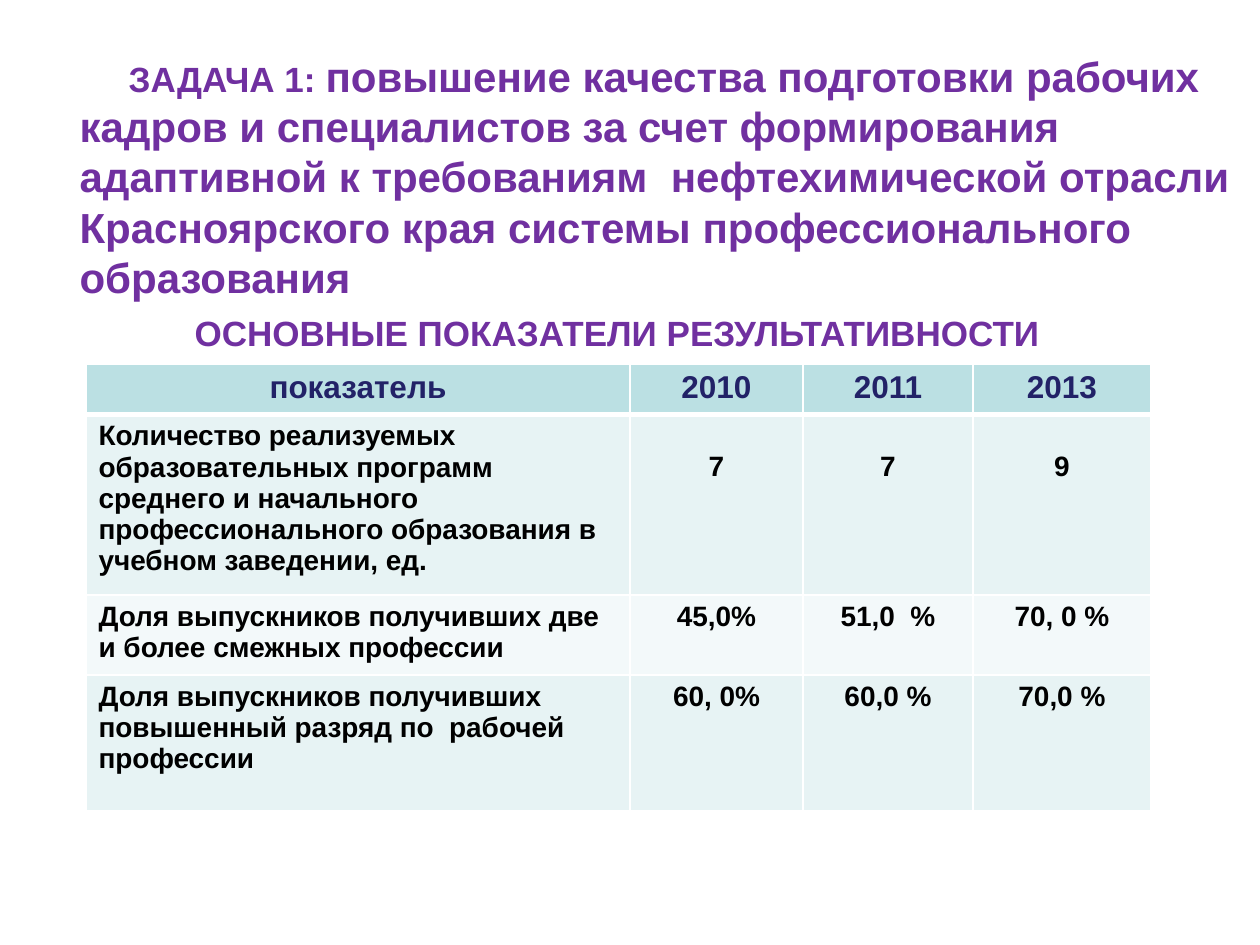
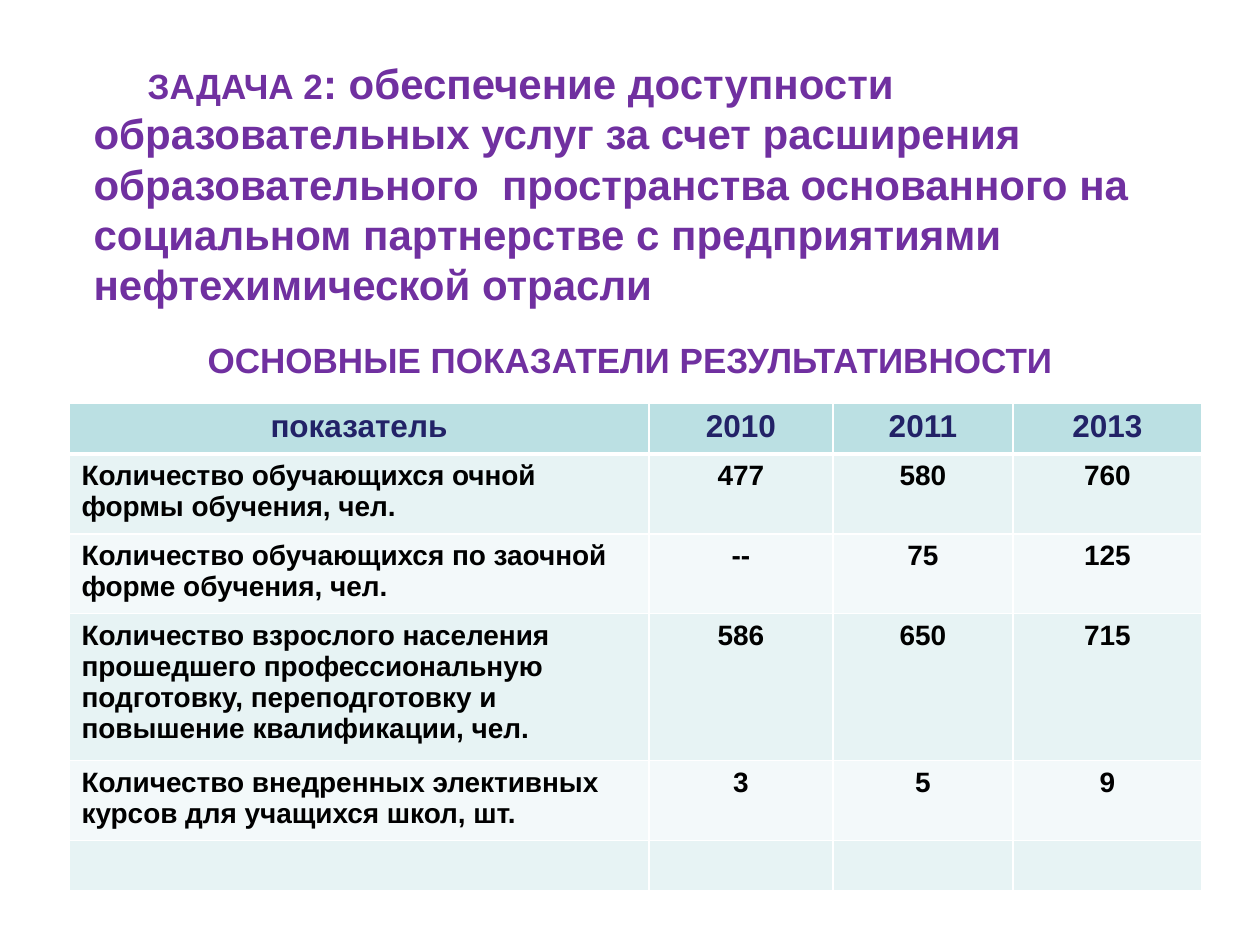
import pptx
import pptx.util
import pptx.dml.color
import pptx.enum.text
import pptx.oxml
import pptx.oxml.ns

RGB = pptx.dml.color.RGBColor
ALIGN = pptx.enum.text.PP_ALIGN
MID = pptx.enum.text.MSO_ANCHOR.MIDDLE
Pt = pptx.util.Pt

# Shared look
FONT = "Arial"
VIOLET = RGB(0x70, 0x30, 0xA0)
NAVY = RGB(0x22, 0x22, 0x67)
BLACK = RGB(0, 0, 0)
HEAD = RGB(0xBB, 0xE0, 0xE3)
BANDS = RGB(0xE7, 0xF3, 0xF4), RGB(0xF3, 0xF9, 0xFA)
WHITE = "FFFFFF"
EMU = 914400 // 126
PAD = 6
LEAD = 28.75
LINE = 31

# Content
CAPTION = "ОСНОВНЫЕ ПОКАЗАТЕЛИ РЕЗУЛЬТАТИВНОСТИ "
YEARS = ("показатель", "2010", "2011", "2013")
SLIDES = [
    dict(
        title=[("ЗАДАЧА 1: ", 20),
               ("повышение качества подготовки рабочих кадров и специалистов "
                "за счет формирования адаптивной к требованиям  "
                "нефтехимической отрасли Красноярского края системы "
                "профессионального образования", 24)],
        box=(67, 63, 1256, 276), indent=49, lift=50,
        caption=(55, 253, 1134, 158),
        place=(86, 364), cols=(544, 173, 170, 178),
        heights=(47, 168, 76, 136), lowered={1},
        rows=[
            ("Количество реализуемых образовательных программ среднего и "
             "начального профессионального образования в учебном "
             "заведении, ед.", "7", "7", "9"),
            ("Доля выпускников получивших две и более смежных профессии",
             "45,0%", "51,0  %", "70, 0 %"),
            ("Доля выпускников получивших повышенный разряд по  рабочей "
             "профессии", "60, 0%", "60,0 %", "70,0 %"),
        ]),
    dict(
        title=[("ЗАДАЧА 2", 20),
               (": обеспечение доступности образовательных услуг за счет "
                "расширения образовательного  пространства основанного на "
                "социальном партнерстве с предприятиями нефтехимической "
                "отрасли", 24)],
        box=(81, 59, 1217, 349), indent=54, lift=100,
        caption=(68, 281, 1134, 158),
        place=(69, 403), cols=(580, 184, 180, 189),
        heights=(51, 75, 75, 137, 75, 50), lowered=set(),
        rows=[
            ("Количество обучающихся очной формы обучения, чел.",
             "477", "580", "760"),
            ("Количество обучающихся по заочной форме обучения, чел.",
             "--", "75", "125"),
            ("Количество взрослого населения прошедшего профессиональную "
             "подготовку, переподготовку и повышение квалификации, чел.",
             "586", "650", "715"),
            ("Количество внедренных элективных курсов для учащихся школ, шт.",
             "3", "5", "9"),
            ("", "", "", ""),
        ]),
]


def px(num):
    return pptx.util.Emu(num * EMU)


def add_run(para, text, size, color):
    run = para.add_run()
    run.text = text
    font = run.font
    font.name, font.size, font.bold = FONT, Pt(size), True
    font.color.rgb = color


def add_title(slide, data):
    shape = slide.shapes.title
    shape.left, shape.top, shape.width, shape.height = map(px, data["box"])
    frame = shape.text_frame
    frame.auto_size = pptx.enum.text.MSO_AUTO_SIZE.NONE
    frame.word_wrap, frame.vertical_anchor = True, MID
    frame.margin_top, frame.margin_bottom = px(PAD), px(PAD + data["lift"])
    frame.margin_right = px(40)
    para = frame.paragraphs[0]
    para.alignment, para.line_spacing = ALIGN.LEFT, Pt(LEAD)
    para._p.get_or_add_pPr().set("indent", str(px(data["indent"])))
    for text, size in data["title"]:
        add_run(para, text, size, VIOLET)


def add_caption(slide, box):
    frame = slide.shapes.add_textbox(*map(px, box)).text_frame
    frame.word_wrap, frame.vertical_anchor = True, MID
    para = frame.paragraphs[0]
    para.alignment = ALIGN.CENTER
    add_run(para, CAPTION, 20, VIOLET)


def add_edges(cell, first):
    # White rules, thicker under the header row
    props = cell._tc.get_or_add_tcPr()
    for side in "LRTB":
        thick = 3 if first and side == "B" or first is None and side == "T" else 1
        props.append(pptx.oxml.parse_xml(
            f'<a:ln{side} {pptx.oxml.ns.nsdecls("a")} w="{Pt(thick)}">'
            f'<a:solidFill><a:srgbClr val="{WHITE}"/></a:solidFill>'
            f'</a:ln{side}>'))


def add_table(slide, data):
    rows = [YEARS] + data["rows"]
    cols, highs = data["cols"], data["heights"]
    table = slide.shapes.add_table(
        len(rows), len(cols), *map(px, data["place"]),
        px(sum(cols)), px(sum(highs))).table
    for col, wide in zip(table.columns, cols):
        col.width = px(wide)
    for i, (row, high) in enumerate(zip(rows, highs)):
        table.rows[i].height = px(high)
        for j, text in enumerate(row):
            cell = table.cell(i, j)
            add_edges(cell, {0: True, 1: None}.get(i, False))
            cell.fill.solid()
            cell.fill.fore_color.rgb = BANDS[(i - 1) % 2] if i else HEAD
            if j and i in data["lowered"]:
                cell.margin_top = px(PAD + LINE)
            para = cell.text_frame.paragraphs[0]
            para.alignment = ALIGN.CENTER if j or not i else ALIGN.LEFT
            if text:
                add_run(para, text, 16 if i else 18, BLACK if i else NAVY)


def main():
    deck = pptx.Presentation()
    deck.slide_width, deck.slide_height = px(1260), px(945)
    for data in SLIDES:
        slide = deck.slides.add_slide(deck.slide_layouts[5])
        add_title(slide, data)
        add_caption(slide, data["caption"])
        add_table(slide, data)
    deck.save("out.pptx")


if __name__ == "__main__":
    main()
